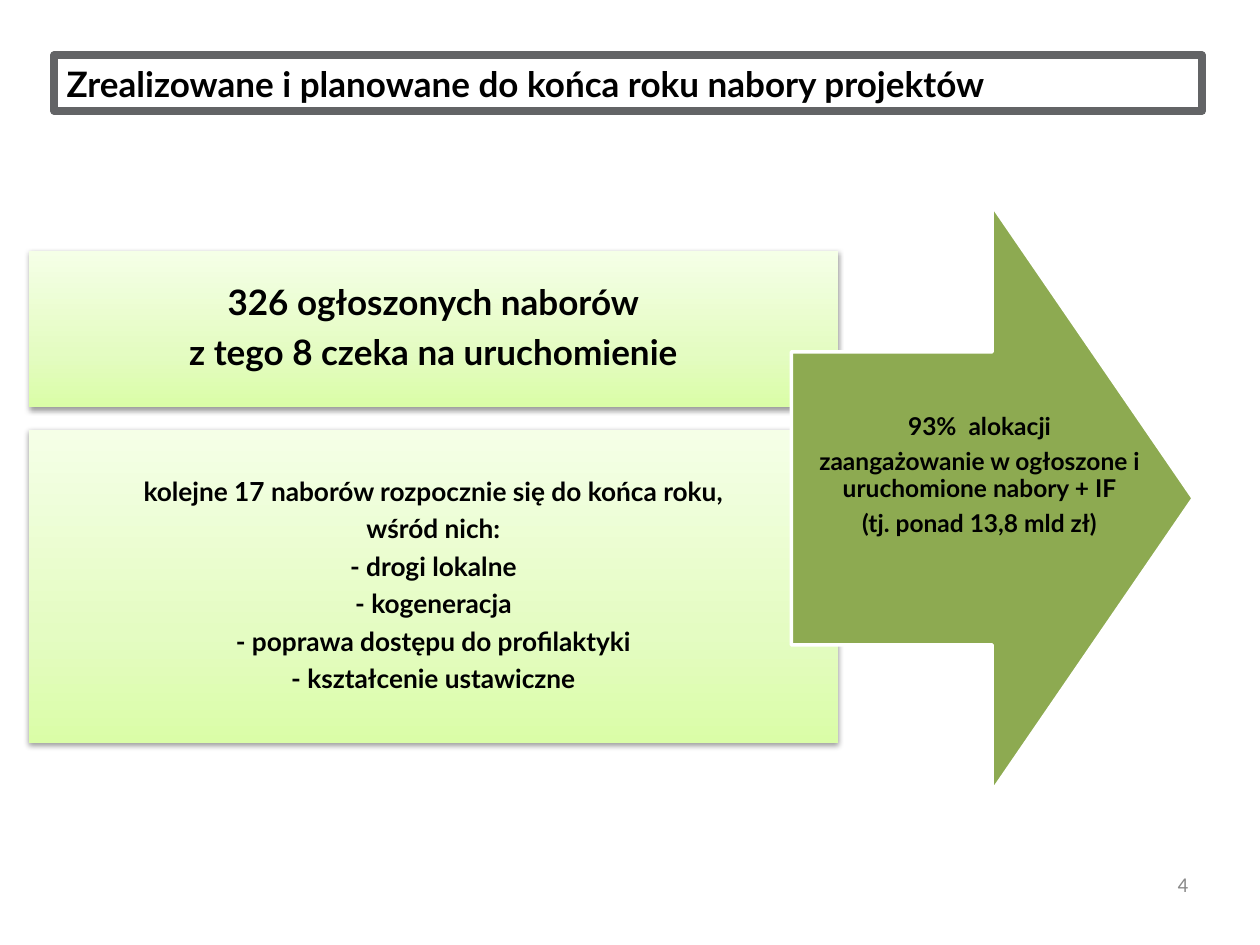
import copy
from dataclasses import dataclass

import pptx
import pptx.dml.color
import pptx.enum.shapes
import pptx.enum.text
import pptx.oxml
import pptx.oxml.ns
import pptx.util

Inches = pptx.util.Inches
Pt = pptx.util.Pt
Shape = pptx.enum.shapes.MSO_SHAPE
Align = pptx.enum.text.PP_ALIGN
Anchor = pptx.enum.text.MSO_ANCHOR


@dataclass(frozen=True)
class Theme:
    """Colours, fonts and type sizes of the slide."""
    ink: str = "000000"
    frame: str = "636466"
    green: str = "8DAA51"
    white: str = "FFFFFF"
    grey: str = "898989"
    fade: tuple = ((0, "DAFDA7"), (0.35, "E4FCC2"), (1, "F5FFE7"))
    font: str = "Lato"
    plain: str = "Calibri"
    head: int = 20
    body: int = 15
    note: int = 14
    foot: int = 12


THEME = Theme()
SHADOW = (
    f'<a:effectLst {pptx.oxml.ns.nsdecls("a")}>'
    '<a:outerShdw blurRad="40000" dist="20000" dir="5400000" rotWithShape="0">'
    '<a:srgbClr val="000000"><a:alpha val="38000"/></a:srgbClr>'
    '</a:outerShdw></a:effectLst>'
)


def rgb(code):
    """Turn a hex code into a colour."""
    return pptx.dml.color.RGBColor.from_string(code)


def write(shape, lines, size, align=Align.CENTER, inset=0.01,
          color=THEME.ink, font=THEME.font, bold=True):
    """Set the lines of a shape with even spacing between them."""
    frame = shape.text_frame
    frame.word_wrap = True
    frame.vertical_anchor = Anchor.MIDDLE
    frame.margin_left = frame.margin_right = Inches(inset)
    frame.margin_top = frame.margin_bottom = Inches(0.01)
    frame.text = "\n".join(lines)
    for rank, para in enumerate(frame.paragraphs):
        para.alignment = align
        if len(lines) > 1:
            para.line_spacing = 0.9
        if rank:
            para.space_before = Pt(size * 0.35)
        for run in para.runs:
            run.font.name = font
            run.font.size = Pt(size)
            run.font.bold = bold
            run.font.color.rgb = rgb(color)


def title(slide, box, text):
    """Place the framed title."""
    shape = slide.shapes.add_shape(Shape.RECTANGLE, *map(Inches, box))
    shape.shadow.inherit = False
    shape.fill.background()
    shape.line.color.rgb = rgb(THEME.frame)
    shape.line.width = Pt(4.5)
    write(shape, [text], THEME.head, Align.LEFT, 0.1)


def card(slide, box, lines, size):
    """Place a fading green card with a soft shadow."""
    shape = slide.shapes.add_shape(Shape.RECTANGLE, *map(Inches, box))
    shape.line.fill.background()
    shape.fill.gradient()
    shape.fill.gradient_angle = 90
    props = shape._element.spPr
    stops = props.find(".//" + pptx.oxml.ns.qn("a:gsLst"))
    stops.append(copy.deepcopy(stops[0]))
    for stop, (place, code) in zip(shape.fill.gradient_stops, THEME.fade):
        stop.position = place
        stop.color.rgb = rgb(code)
    props.append(pptx.oxml.parse_xml(SHADOW))
    write(shape, lines, size)


def arrow(slide, box, lines):
    """Place the result arrow and its caption."""
    left, top, width, height = box
    shape = slide.shapes.add_shape(Shape.RIGHT_ARROW, *map(Inches, box))
    shape.shadow.inherit = False
    shape.fill.solid()
    shape.fill.fore_color.rgb = rgb(THEME.green)
    shape.line.color.rgb = rgb(THEME.white)
    shape.line.width = Pt(2)
    area = (left + 0.19, top + 1.65, width - 0.58, 1)
    label = slide.shapes.add_textbox(*map(Inches, area))
    write(label, lines, THEME.note, inset=0)


def footer(slide, box, text):
    """Place the page number."""
    label = slide.shapes.add_textbox(*map(Inches, box))
    write(label, [text], THEME.foot, Align.RIGHT, 0.1,
          THEME.grey, THEME.plain, False)


def main():
    """Build the slide and save it."""
    deck = pptx.Presentation()
    deck.slide_width = Inches(10)
    deck.slide_height = Inches(7.5)
    slide = deck.slides.add_slide(deck.slide_layouts[6])
    title(slide, (0.43, 0.44, 9.11, 0.44),
          "Zrealizowane i planowane do końca roku nabory projektów")
    footer(slide, (7.2, 6.82, 2.33, 0.4), "4")
    card(slide, (0.23, 1.99, 6.42, 1.24), [
        "326 ogłoszonych naborów",
        "z tego 8 czeka na uruchomienie",
    ], THEME.head)
    card(slide, (0.23, 3.41, 6.42, 2.49), [
        "kolejne 17 naborów rozpocznie się do końca roku,",
        "wśród nich:",
        "- drogi lokalne",
        "- kogeneracja",
        "- poprawa dostępu do profilaktyki",
        "- kształcenie ustawiczne",
    ], THEME.body)
    arrow(slide, (6.28, 1.63, 3.19, 4.65), [
        "93%  alokacji",
        "zaangażowanie w ogłoszone i uruchomione nabory + IF",
        "(tj. ponad 13,8 mld zł)",
    ])
    deck.save("out.pptx")


if __name__ == "__main__":
    main()
